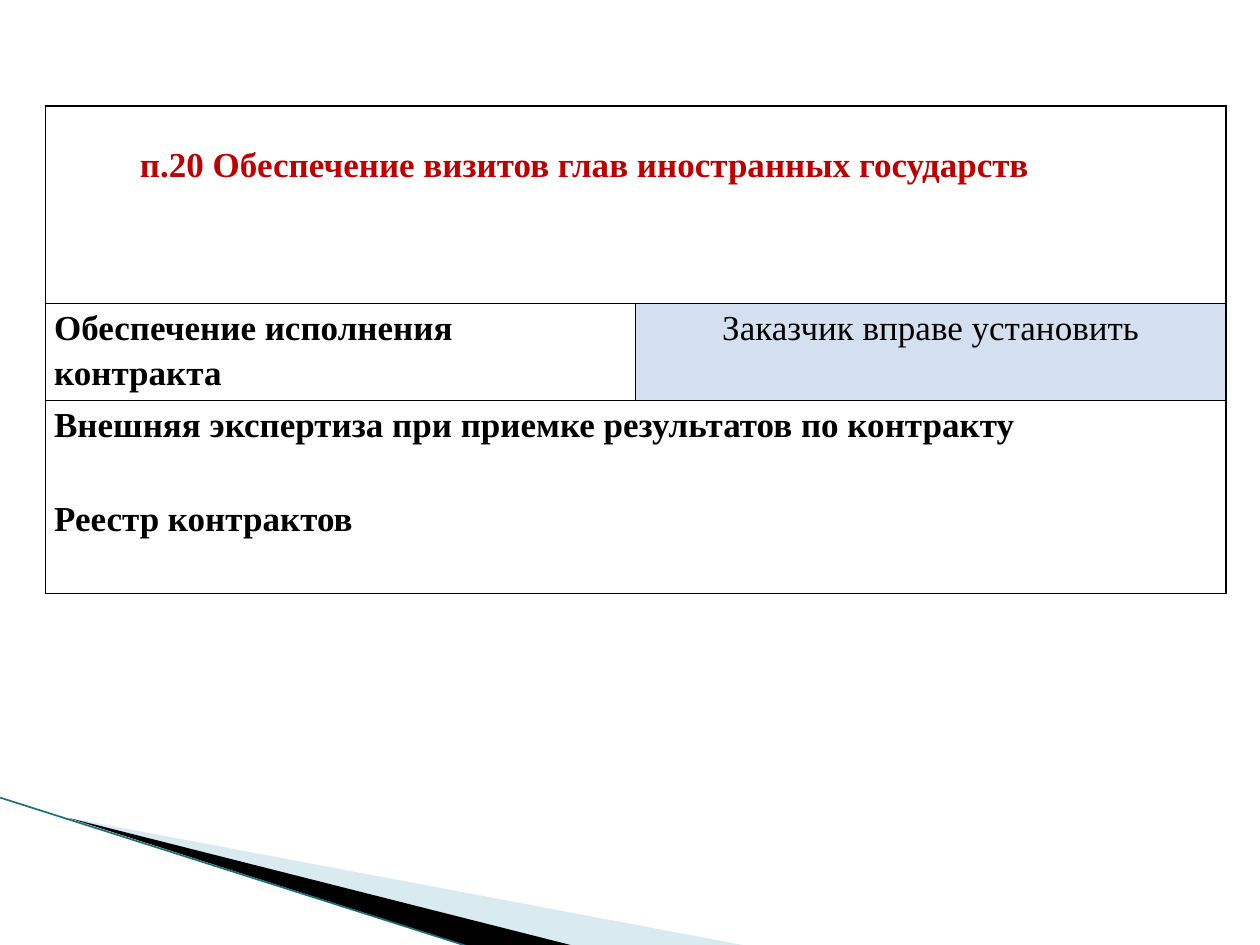
from lxml import etree
from pptx import Presentation
from pptx import util as u
from pptx.dml.color import RGBColor
from pptx.enum import shapes, text
from pptx.oxml import parse_xml
from pptx.oxml.ns import nsdecls, qn

WIDTH, HEIGHT = u.Inches(10), u.Inches(7.5)
FONT = "Times New Roman"
COLORS = {
    "ink": "000000",
    "heading": "C00000",
    "option": "D4DFEF",
    "wedge": "A0CBDC",
    "edge": "1A6E80",
}


def color(name):
    """Return the named colour."""
    return RGBColor.from_string(COLORS[name])


def add_wedge(slide, points, fill, opacity=100):
    """Draw a filled outline whose points are in inches."""
    start, *others = [(u.Inches(x), u.Inches(y)) for x, y in points]
    builder = slide.shapes.build_freeform(*start)
    builder.add_line_segments(others, close=True)
    shape = builder.convert_to_shape()
    shape.shadow.inherit = False
    shape.fill.solid()
    shape.fill.fore_color.rgb = color(fill)
    shape.line.fill.background()
    if opacity < 100:
        rgb = shape.fill._xPr.find(".//" + qn("a:srgbClr"))
        etree.SubElement(rgb, qn("a:alpha"), val=str(opacity * 1000))


def add_corner(slide, left, top, bottom):
    """Draw the wedges and edge line of the lower left corner."""
    tip = (left + 0.54, top + 0.16)
    add_wedge(slide, [tip, (5.95, bottom), (4.56, bottom)], "wedge", 40)
    add_wedge(slide, [tip, (4.57, bottom), (3.72, bottom)], "ink")
    edge = slide.shapes.add_connector(
        shapes.MSO_CONNECTOR.STRAIGHT,
        u.Inches(left), u.Inches(top), u.Inches(3.71), u.Inches(bottom))
    edge.line.color.rgb = color("edge")
    edge.line.width = u.Pt(0.95)
    etree.SubElement(edge._element.spPr, qn("a:effectLst"))


def format_cell(cell, fill=None):
    """Give a cell thin black borders, narrow margins and its fill."""
    properties = cell._tc.get_or_add_tcPr()
    for side in ("lnL", "lnR", "lnT", "lnB"):
        properties.append(parse_xml(
            f'<a:{side} {nsdecls("a")} w="12700"><a:solidFill>'
            f'<a:srgbClr val="{COLORS["ink"]}"/></a:solidFill></a:{side}>'))
    if fill:
        cell.fill.solid()
        cell.fill.fore_color.rgb = color(fill)
    else:
        cell.fill.background()
    cell.margin_left = cell.margin_right = u.Inches(0.07)
    cell.margin_top = cell.margin_bottom = 0


def write_cell(cell, lines, ink="ink", bold=True, centered=False, spacing=1.15):
    """Write one paragraph per line, with a gap between them."""
    cell.text = "\n".join(lines)
    for index, paragraph in enumerate(cell.text_frame.paragraphs):
        paragraph.line_spacing = spacing
        paragraph.alignment = text.PP_ALIGN.CENTER if centered else text.PP_ALIGN.LEFT
        if index:
            paragraph.space_before = u.Pt(28)
        paragraph.font.name = FONT
        paragraph.font.size = u.Pt(20)
        paragraph.font.bold = bold
        paragraph.font.color.rgb = color(ink)


def add_contract_table(slide, left, top, width, row_heights):
    """Place the table of contract rules."""
    frame = slide.shapes.add_table(
        len(row_heights), 2, left, top, width, sum(row_heights))
    table = frame.table
    table.first_row = table.horz_banding = False
    for column in table.columns:
        column.width = width // 2
    for row, height in zip(table.rows, row_heights):
        row.height = height
    option = table.cell(1, 1)
    for cell in table.iter_cells():
        format_cell(cell, "option" if cell == option else None)
    for row in (0, 2):
        table.cell(row, 0).merge(table.cell(row, 1))

    heading = table.cell(0, 0)
    heading.margin_top = u.Inches(0.32)
    heading.margin_right = u.Inches(0.88)
    write_cell(heading, ["п.20 Обеспечение визитов глав иностранных государств"],
               "heading", centered=True, spacing=1.0)
    write_cell(table.cell(1, 0), ["Обеспечение исполнения контракта"])
    write_cell(option, ["Заказчик вправе установить"], bold=False, centered=True)
    write_cell(table.cell(2, 0), [
        "Внешняя экспертиза при приемке результатов по контракту",
        "Реестр контрактов"])


def main():
    """Build and save the slide."""
    presentation = Presentation()
    presentation.slide_width, presentation.slide_height = WIDTH, HEIGHT
    slide = presentation.slides.add_slide(presentation.slide_layouts[6])
    add_corner(slide, left=0, top=6.33, bottom=7.51)
    add_contract_table(slide, u.Inches(0.36), u.Inches(0.84), u.Inches(9.37),
                       [u.Inches(height) for height in (1.57, 0.77, 1.53)])
    presentation.save("out.pptx")


if __name__ == "__main__":
    main()
